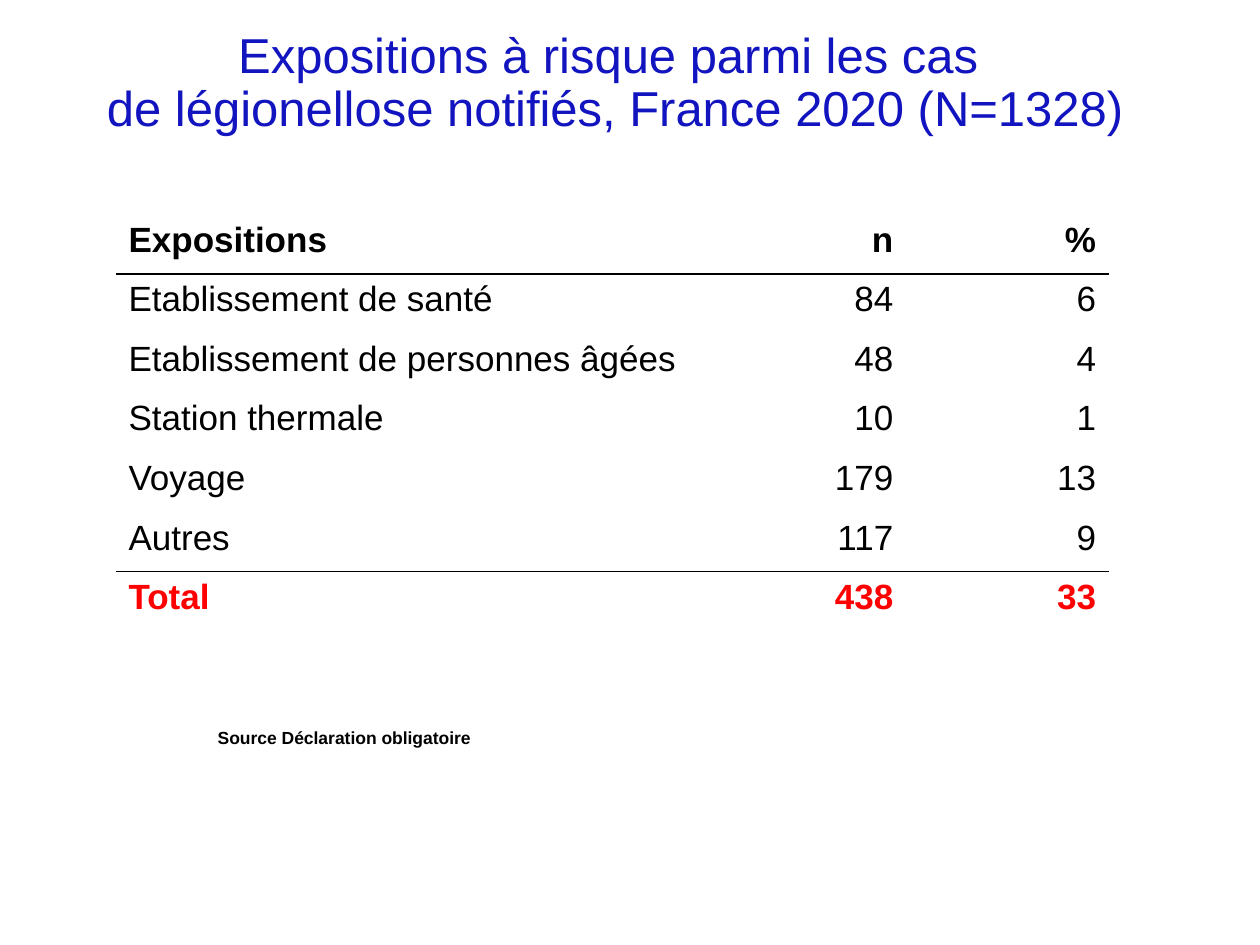
from dataclasses import dataclass

from lxml.etree import SubElement
from pptx import Presentation
from pptx.dml.color import RGBColor as Rgb
from pptx.enum.text import MSO_ANCHOR as Anchor, MSO_AUTO_SIZE as Fit, PP_ALIGN as Align
from pptx.oxml.ns import qn
from pptx.util import Inches, Pt


@dataclass(frozen=True)
class Theme:
    font: str = "Arial"
    white: str = "FFFFFF"
    ink: str = "000000"
    blue: str = "1114BF"
    red: str = "FF0000"
    head: int = 28
    cell: int = 20
    note: int = 10
    rule: int = 1


@dataclass(frozen=True)
class Row:
    label: str
    count: str
    share: str
    color: str
    bold: bool = False
    over: bool = False  # rule above the row
    under: bool = False  # rule below the row


THEME = Theme()
ROWS = [
    Row("Expositions", "n", "%", THEME.ink, bold=True, under=True),
    Row("Etablissement de santé", "84", "6", THEME.ink, over=True),
    Row("Etablissement de personnes âgées", "48", "4", THEME.ink),
    Row("Station thermale", "10", "1", THEME.ink),
    Row("Voyage", "179", "13", THEME.ink),
    Row("Autres", "117", "9", THEME.ink, under=True),
    Row("Total", "438", "33", THEME.red, bold=True, over=True),
]
WIDTHS = (4.83, 1.44, 1.61)
HIGH = 3.31


def style(frame, size: int, color: str, bold: bool = False) -> None:
    for para in frame.paragraphs:
        for run in para.runs:
            font = run.font
            font.name, font.size, font.bold = THEME.font, Pt(size), bold
            font.color.rgb = Rgb.from_string(color)


def edge(cell, side: str, shown: bool) -> None:
    """Give one side of a cell a thin rule, or none."""
    line = SubElement(cell._tc.get_or_add_tcPr(), qn(f"a:ln{side}"))
    if shown:
        line.set("w", str(Pt(THEME.rule)))
        fill = SubElement(line, qn("a:solidFill"))
        SubElement(fill, qn("a:srgbClr")).set("val", THEME.ink)
    else:
        SubElement(line, qn("a:noFill"))


def draw_cell(cell, text: str, row: Row, align: Align) -> None:
    cell.text_frame.text = text
    cell.text_frame.paragraphs[0].alignment = align
    style(cell.text_frame, THEME.cell, row.color, row.bold)
    sides = {"L": False, "R": False, "T": row.over, "B": row.under}
    for side, shown in sides.items():
        edge(cell, side, shown)
    cell.fill.background()


def draw_title(slide) -> None:
    title = slide.shapes.title
    title.left, title.top = Inches(0.35), Inches(0.04)
    title.width, title.height = Inches(9.06), Inches(1.25)
    title.fill.solid()
    title.fill.fore_color.rgb = Rgb.from_string(THEME.white)
    frame = title.text_frame
    frame.text = ("Expositions à risque parmi les cas \n"
                  "de légionellose notifiés, France 2020 (N=1328)")
    frame.auto_size = Fit.NONE
    frame.vertical_anchor = Anchor.MIDDLE
    for para in frame.paragraphs:
        para.alignment, para.line_spacing = Align.CENTER, 0.9
        para.space_before = Pt(0)
    style(frame, THEME.head, THEME.blue)


def draw_table(slide) -> None:
    table = slide.shapes.add_table(
        len(ROWS), len(WIDTHS), Inches(0.92), Inches(1.7),
        Inches(sum(WIDTHS)), Inches(HIGH)).table
    table.first_row = table.horz_banding = False
    for col, wide in zip(table.columns, WIDTHS):
        col.width = Inches(wide)
    for r, row in enumerate(ROWS):
        table.rows[r].height = Inches(HIGH / len(ROWS))
        for c, text in enumerate((row.label, row.count, row.share)):
            align = Align.RIGHT if c else Align.LEFT
            draw_cell(table.cell(r, c), text, row, align)


def draw_note(slide) -> None:
    box = slide.shapes.add_textbox(Inches(1.63), Inches(5.72), Inches(3.23), Inches(0.27))
    frame = box.text_frame
    frame.word_wrap = True
    frame.auto_size = Fit.SHAPE_TO_FIT_TEXT
    frame.text = "Source Déclaration obligatoire"
    style(frame, THEME.note, THEME.ink, bold=True)


def main() -> None:
    deck = Presentation()
    deck.slide_width, deck.slide_height = Inches(10), Inches(7.5)
    slide = deck.slides.add_slide(deck.slide_layouts[5])  # title only
    draw_title(slide)
    draw_table(slide)
    draw_note(slide)
    deck.save("out.pptx")


if __name__ == "__main__":
    main()
